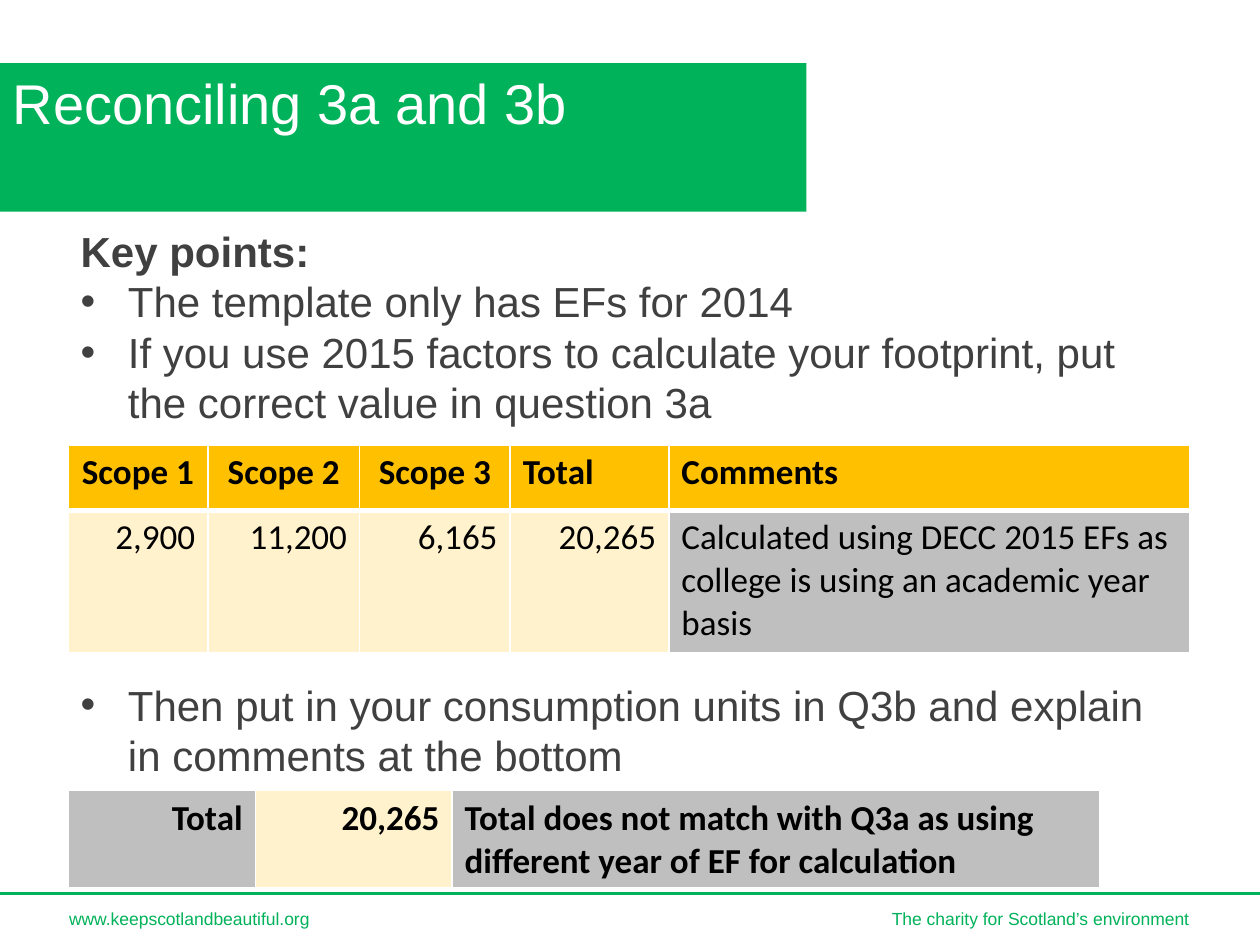
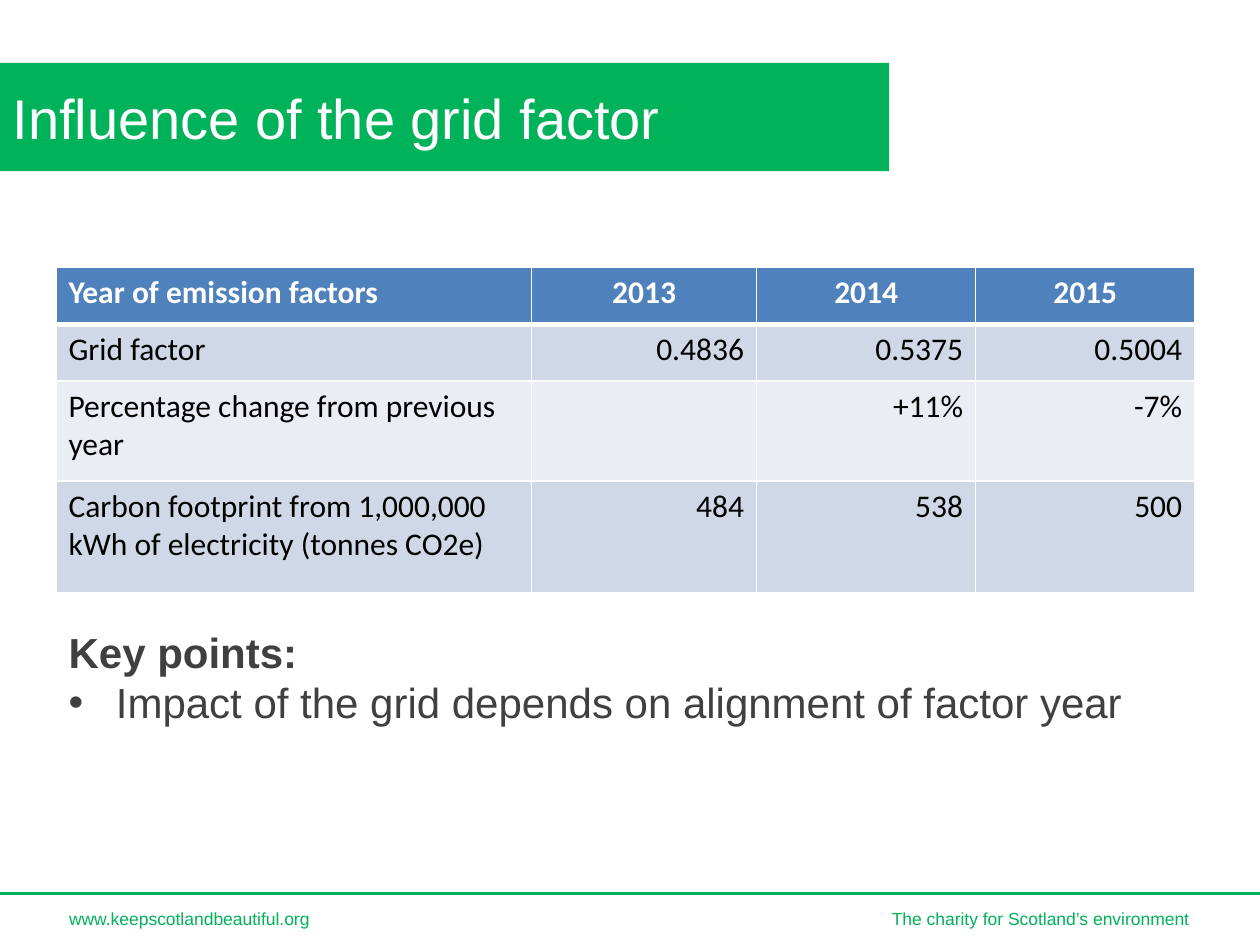
from lxml import etree
from pptx import Presentation
from pptx.dml.color import RGBColor
from pptx.enum import shapes, text
from pptx.oxml import ns
from pptx.util import Pt

COLOURS = {
    "green": "00B259", "white": "FFFFFF", "black": "000000", "body": "404040",
    "amber": "FFC000", "cream": "FFF2CC", "grey": "BFBFBF",
    "blue": "4F81BD", "blue_band": "D0D8E8", "pale_band": "E9EDF4",
}
ALIGN = {"l": text.PP_ALIGN.LEFT, "c": text.PP_ALIGN.CENTER, "r": text.PP_ALIGN.RIGHT}

# Shared formats
FRAME = {"word_wrap": True, "auto_size": text.MSO_AUTO_SIZE.NONE,
         "vertical_anchor": text.MSO_ANCHOR.TOP}
TITLE = {"name": "Arial", "size": Pt(32), "bold": False}
BODY = {"name": "Arial", "size": Pt(24), "bold": False}
HEADING = {**BODY, "bold": True}
FOOTER = {"name": "Arial", "size": Pt(10), "bold": False}
BULLET_INDENT = Pt(27)
LINE_PITCH = 1.2  # line height as a share of the font size


def rgb(colour):
    return RGBColor.from_string(COLOURS[colour])


def apply(target, values):
    for name, value in values.items():
        setattr(target, name, value)


def place(shape, left, top, width, height):
    apply(shape, {"left": Pt(left), "top": Pt(top),
                  "width": Pt(width), "height": Pt(height)})


def write(paragraph, words, style, colour, align="l"):
    paragraph.text = words
    paragraph.alignment = ALIGN[align]
    apply(paragraph.font, style)
    paragraph.font.color.rgb = rgb(colour)


def write_spaced(paragraph, words, style, colour, before=0):
    write(paragraph, words, style, colour)
    apply(paragraph, {"line_spacing": Pt(style["size"].pt * LINE_PITCH),
                      "space_before": Pt(before), "space_after": Pt(0)})


# Title on its green band
def add_title(slide, words, band_box, title_box):
    band = slide.shapes.add_shape(shapes.MSO_SHAPE.RECTANGLE,
                                  *(Pt(side) for side in band_box))
    band.shadow.inherit = False
    band.fill.solid()
    band.fill.fore_color.rgb = rgb("green")
    band.line.fill.background()
    slide.shapes._spTree.insert(2, band._element)  # behind the title
    title = slide.shapes.title
    place(title, *title_box)
    apply(title.text_frame, FRAME)
    write_spaced(title.text_frame.paragraphs[0], words, TITLE, "white")


# "Key points" list; each point is (words, space before)
def add_key_points(slide, box, points):
    body = slide.placeholders[1]
    place(body, *box)
    frame = body.text_frame
    apply(frame, FRAME)
    heading = frame.paragraphs[0]
    heading_props = heading._p.get_or_add_pPr()
    apply_indent(heading_props, 0, 0)
    etree.SubElement(heading_props, ns.qn("a:buNone"))
    write_spaced(heading, "Key points:", HEADING, "body")
    for words, before in points:
        point = frame.add_paragraph()
        props = point._p.get_or_add_pPr()
        apply_indent(props, BULLET_INDENT, -BULLET_INDENT)
        etree.SubElement(props, ns.qn("a:buFont"), typeface="Arial")
        etree.SubElement(props, ns.qn("a:buChar"), char="•")
        write_spaced(point, words, BODY, "body", before)


def apply_indent(props, margin, indent):
    props.set("marL", str(int(margin)))
    props.set("indent", str(int(indent)))


# Tables
def set_borders(cell, row):
    """White rules, heavier under the first row."""
    widths = {"lnL": 1, "lnR": 1, "lnT": 3 if row == 1 else 1, "lnB": 3 if row == 0 else 1}
    props = cell._tc.get_or_add_tcPr()
    for index, (edge, width) in enumerate(widths.items()):
        line = etree.Element(ns.qn(f"a:{edge}"), w=str(Pt(width)))
        fill = etree.SubElement(line, ns.qn("a:solidFill"))
        etree.SubElement(fill, ns.qn("a:srgbClr"), val=COLOURS["white"])
        props.insert(index, line)


def add_grid(slide, left, top, widths, heights, size, rows):
    """Each row is (fills, aligns, bold, text colour, words)."""
    grid = slide.shapes.add_table(len(rows), len(widths), Pt(left), Pt(top),
                                  Pt(sum(widths)), Pt(sum(heights))).table
    apply(grid, {"first_row": False, "horz_banding": False})
    for column, width in zip(grid.columns, widths):
        column.width = Pt(width)
    for row, height in zip(grid.rows, heights):
        row.height = Pt(height)
    for r, (fills, aligns, bold, colour, words) in enumerate(rows):
        style = {"name": "Calibri", "size": Pt(size), "bold": bold}
        for c, (fill, align, entry) in enumerate(zip(fills, aligns, words)):
            cell = grid.cell(r, c)
            set_borders(cell, r)
            cell.fill.solid()
            cell.fill.fore_color.rgb = rgb(fill)
            write(cell.text_frame.paragraphs[0], entry, style, colour, align)


# Footer rule and lines
def add_footer(slide):
    rule = slide.shapes.add_connector(shapes.MSO_CONNECTOR.STRAIGHT,
                                      Pt(0), Pt(510.5), Pt(720), Pt(510.5))
    rule.line.color.rgb = rgb("green")
    rule.line.width = Pt(2)
    etree.SubElement(rule._element.spPr, ns.qn("a:effectLst"))
    for words, left, width in (("www.keepscotlandbeautiful.org", 32.4, 153.4),
                               ("The charity for Scotland’s environment", 502.5, 185.8)):
        note = slide.shapes.add_textbox(Pt(left), Pt(515.5), Pt(width), Pt(19.4))
        apply(note.text_frame, {**FRAME, "word_wrap": False})
        write_spaced(note.text_frame.paragraphs[0], words, FOOTER, "green")


def add_reconciling(slide):
    add_title(slide, "Reconciling 3a and 3b", (0, 36, 460.8, 85), (0, 35.3, 445, 46))
    add_key_points(slide, (38.9, 125.3, 641.5, 356.4), [
        ("The template only has EFs for 2014", 0),
        ("If you use 2015 factors to calculate your footprint, "
         "put the correct value in question 3a", 0),
        ("Then put in your consumption units in Q3b and explain "
         "in comments at the bottom", 144),
    ])
    add_grid(slide, 38.9, 254.2, [79.9, 86.8, 86, 90.7, 297.8], [37.4, 81.4], 20, [
        (["amber"] * 5, "cccll", True, "black",
         ["Scope 1", "Scope 2", "Scope 3", "Total", "Comments"]),
        (["cream"] * 4 + ["grey"], "rrrrl", False, "black",
         ["2,900", "11,200", "6,165", "20,265",
          "Calculated using DECC 2015 EFs as college is using an academic year basis"]),
    ])
    add_grid(slide, 38.9, 451.8, [107, 112.5, 370.2], [52], 20, [
        (["grey", "cream", "grey"], "rrl", True, "black",
         ["Total", "20,265",
          "Total does not match with Q3a as using different year of EF for calculation"]),
    ])


def add_grid_factor(slide):
    add_title(slide, "Influence of the grid factor", (0, 36, 508.2, 61.8), (0, 43.9, 508.2, 46))
    figures = [
        ["Grid factor", "0.4836", "0.5375", "0.5004"],
        ["Percentage change from previous year", "", "+11%", "-7%"],
        ["Carbon footprint from 1,000,000 kWh of electricity (tonnes CO2e)",
         "484", "538", "500"],
    ]
    bands = ["blue_band", "pale_band"]
    add_grid(slide, 32, 152.8, [271.8, 128.6, 125.2, 125.2], [32.5, 32.5, 57, 64], 18, [
        (["blue"] * 4, "lccc", True, "white",
         ["Year of emission factors", "2013", "2014", "2015"]),
        *(([bands[i % 2]] * 4, "lrrr", False, "black", words)
          for i, words in enumerate(figures)),
    ])
    add_key_points(slide, (32, 354.3, 641.5, 65.5), [
        ("Impact of the grid depends on alignment of factor year", 0),
    ])


def main():
    deck = Presentation()
    apply(deck, {"slide_width": Pt(720), "slide_height": Pt(540)})
    for fill_slide in (add_reconciling, add_grid_factor):
        slide = deck.slides.add_slide(deck.slide_layouts[1])
        add_footer(slide)
        fill_slide(slide)
    deck.save("out.pptx")


if __name__ == "__main__":
    main()
